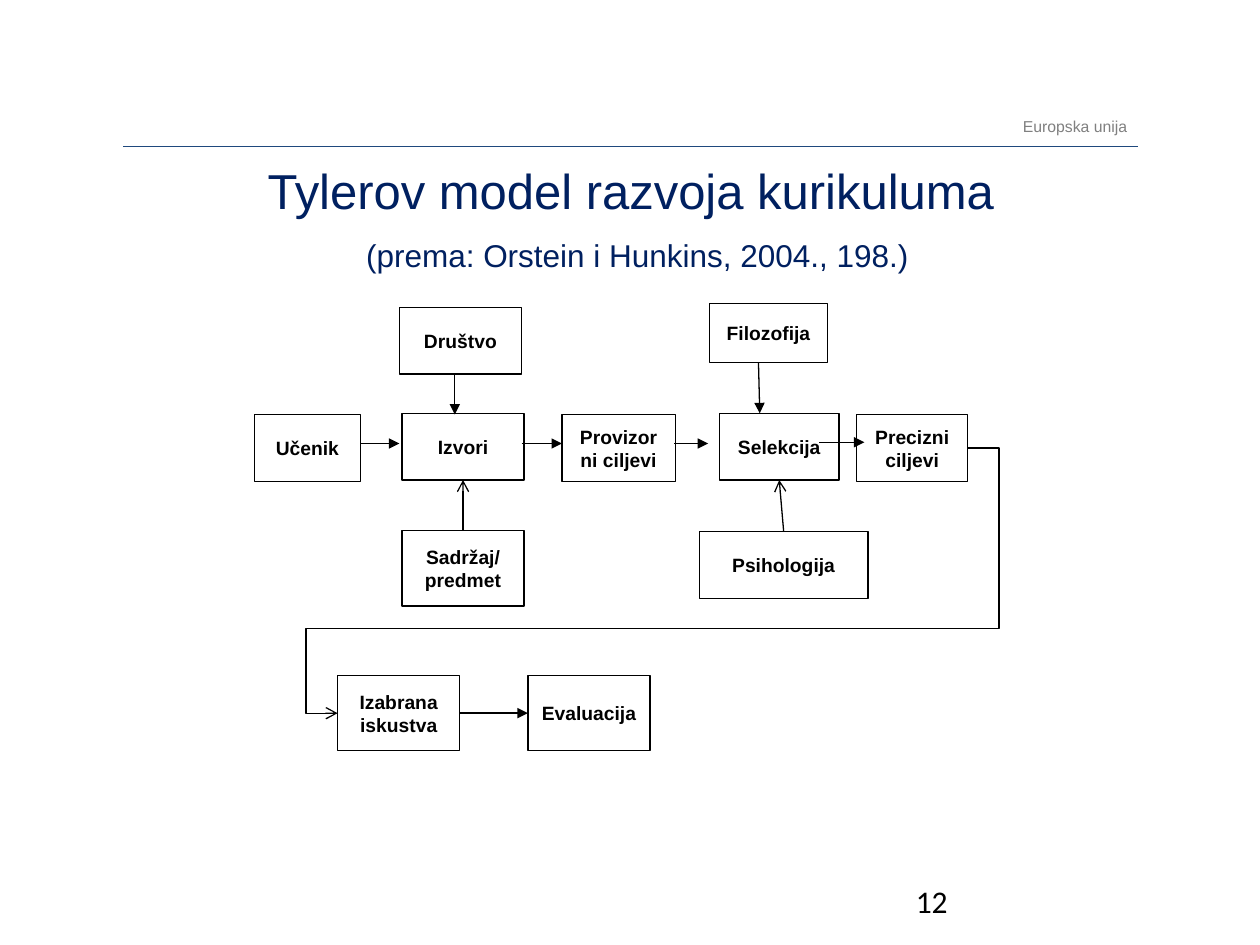
from lxml.etree import SubElement
from pptx import Presentation
from pptx.dml.color import RGBColor
from pptx.enum.shapes import MSO_CONNECTOR, MSO_SHAPE
from pptx.enum.text import MSO_ANCHOR, MSO_AUTO_SIZE, PP_ALIGN
from pptx.oxml.ns import qn
from pptx.util import Inches, Pt

BLACK = RGBColor(0x00, 0x00, 0x00)
WHITE = RGBColor(0xFF, 0xFF, 0xFF)
GREY = RGBColor(0x80, 0x80, 0x80)
NAVY = RGBColor(0x00, 0x20, 0x60)
BLUE = RGBColor(0x1F, 0x49, 0x7D)

# Grid: content margin and width, row tops and box sizes in inches
MARGIN, CONTENT = 0.98, 8.05
TOP_ROW, MAIN_ROW, LOWER_ROW, LAST_ROW = 2.44, 3.28, 4.21, 5.36
WIDE, LOW, TALL = 0.97, 0.53, 0.6
ARROW_ROW = 3.52

deck = Presentation()
deck.slide_width, deck.slide_height = Inches(10), Inches(7.5)
page = deck.slides.add_slide(deck.slide_layouts[5])


def style_font(font, **formats):
    color = formats.pop("color")
    for name, value in formats.items():
        setattr(font, name, value)
    font.color.rgb = color


def add_line(start, end, color=BLACK, width=0.75, head=None, kind=MSO_CONNECTOR.STRAIGHT):
    line = page.shapes.add_connector(kind, *map(Inches, start + end))
    line.line.color.rgb = color
    line.line.width = Pt(width)
    properties = line._element.spPr
    if head:
        SubElement(line.line._get_or_add_ln(), qn("a:tailEnd"), type=head)
    SubElement(properties, qn("a:effectLst"))
    return line


# Header line, header text and page number
add_line((MARGIN, 1.16), (MARGIN + CONTENT, 1.16), BLUE, 0.25)
labels = [
    ("Europska unija", (8.02, 0.88, 1.09, 0.26), dict(size=Pt(9), name="Arial", color=GREY)),
    ("12", (7.17, 6.95, 2.33, 0.4), dict(size=Pt(18), name="Calibri", color=BLACK)),
]
for text, place, formats in labels:
    box = page.shapes.add_textbox(*map(Inches, place))
    box.text_frame.word_wrap = True
    para = box.text_frame.paragraphs[0]
    para.text = text
    style_font(para.runs[0].font, **formats)

# Title with its source on a second line
title = page.shapes.title
title.left, title.top, title.width, title.height = map(Inches, (MARGIN, 1.22, CONTENT, 1.04))
frame = title.text_frame
frame.vertical_anchor = MSO_ANCHOR.TOP
frame.auto_size = MSO_AUTO_SIZE.NONE
para = frame.paragraphs[0]
para.text = "Tylerov model razvoja kurikuluma\v "
para.alignment = PP_ALIGN.CENTER
SubElement(para._p.find(qn("a:br")), qn("a:rPr"), sz="2800")
for span in para.runs:
    style_font(span.font, size=Pt(28), name="Arial", color=NAVY)
span = para.add_run()
span.text = "(prema: Orstein i Hunkins, 2004., 198.)"
style_font(span.font, size=Pt(18), name="Arial", color=NAVY)

# Boxes of the model: text, left, top, width, height
steps = [
    ("Učenik", 2.02, MAIN_ROW + 0.01, 0.84, LOW),
    ("Izvori", 3.19, MAIN_ROW, WIDE, LOW),
    ("Provizorni ciljevi", 4.46, MAIN_ROW + 0.01, 0.9, LOW),
    ("Selekcija", 5.71, MAIN_ROW, 0.95, LOW),
    ("Precizni ciljevi", 6.8, MAIN_ROW + 0.01, 0.88, LOW),
    ("Društvo", 3.17, TOP_ROW, WIDE, LOW),
    ("Filozofija", 5.63, TOP_ROW - 0.03, 0.94, 0.47),
    ("Sadržaj/ predmet", 3.19, LOWER_ROW, WIDE, TALL),
    ("Psihologija", 5.55, LOWER_ROW + 0.01, 1.34, LOW),
    ("Izabrana iskustva", 2.68, LAST_ROW, WIDE, TALL),
    ("Evaluacija", 4.19, LAST_ROW, WIDE, TALL),
]
boxes = {}
for text, *place in steps:
    box = page.shapes.add_shape(MSO_SHAPE.RECTANGLE, *map(Inches, place))
    box.shadow.inherit = False
    box.fill.solid()
    box.fill.fore_color.rgb = WHITE
    box.line.color.rgb = BLACK
    box.line.width = Pt(0.75)
    box.text_frame.word_wrap = True
    box.text_frame.vertical_anchor = MSO_ANCHOR.MIDDLE
    para = box.text_frame.paragraphs[0]
    para.text = text
    para.alignment = PP_ALIGN.CENTER
    para.space_after = Pt(10)
    style_font(para.runs[0].font, size=Pt(11), name="Arial", bold=True, color=BLACK)
    boxes[text] = box

# Free arrows between the boxes
for start, end in [
    ((2.86, ARROW_ROW), (3.17, ARROW_ROW)),
    ((4.14, ARROW_ROW), (4.46, ARROW_ROW)),
    ((5.35, ARROW_ROW), (5.62, ARROW_ROW)),
    ((6.5, ARROW_ROW - 0.01), (6.86, ARROW_ROW - 0.01)),
    ((3.61, 2.97), (3.61, 3.29)),
    ((6.02, 2.88), (6.03, 3.28)),
]:
    add_line(start, end, head="triangle")

# Arrows joined to box sides (0 top, 1 left, 2 bottom, 3 right)
for first, first_side, second, second_side, head, kind in [
    ("Sadržaj/ predmet", 0, "Izvori", 2, "arrow", MSO_CONNECTOR.STRAIGHT),
    ("Psihologija", 0, "Selekcija", 2, "arrow", MSO_CONNECTOR.STRAIGHT),
    ("Izabrana iskustva", 3, "Evaluacija", 1, "triangle", MSO_CONNECTOR.STRAIGHT),
    ("Precizni ciljevi", 3, "Izabrana iskustva", 1, "arrow", MSO_CONNECTOR.ELBOW),
]:
    line = add_line((0, 0), (1, 1), head=head, kind=kind)
    line.begin_connect(boxes[first], first_side)
    line.end_connect(boxes[second], second_side)

# The last arrow bends around the lower boxes
geometry = line._element.spPr.find(qn("a:prstGeom"))
geometry.set("prst", "bentConnector5")
guides = geometry.find(qn("a:avLst"))
if guides is None:
    guides = SubElement(geometry, qn("a:avLst"))
for number, share in enumerate((-0.05, 0.68, 1.05), 1):
    SubElement(guides, qn("a:gd"), name=f"adj{number}", fmla=f"val {round(share * 100000)}")

deck.save("out.pptx")
